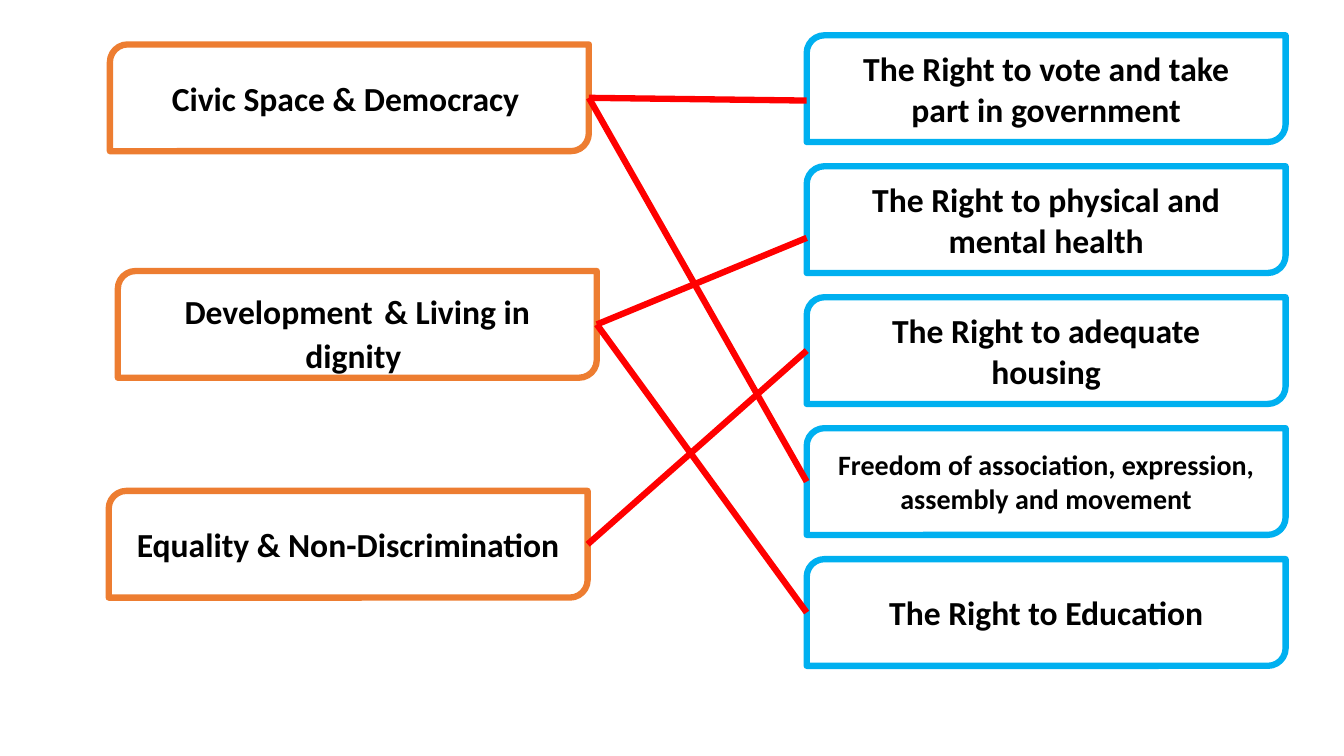
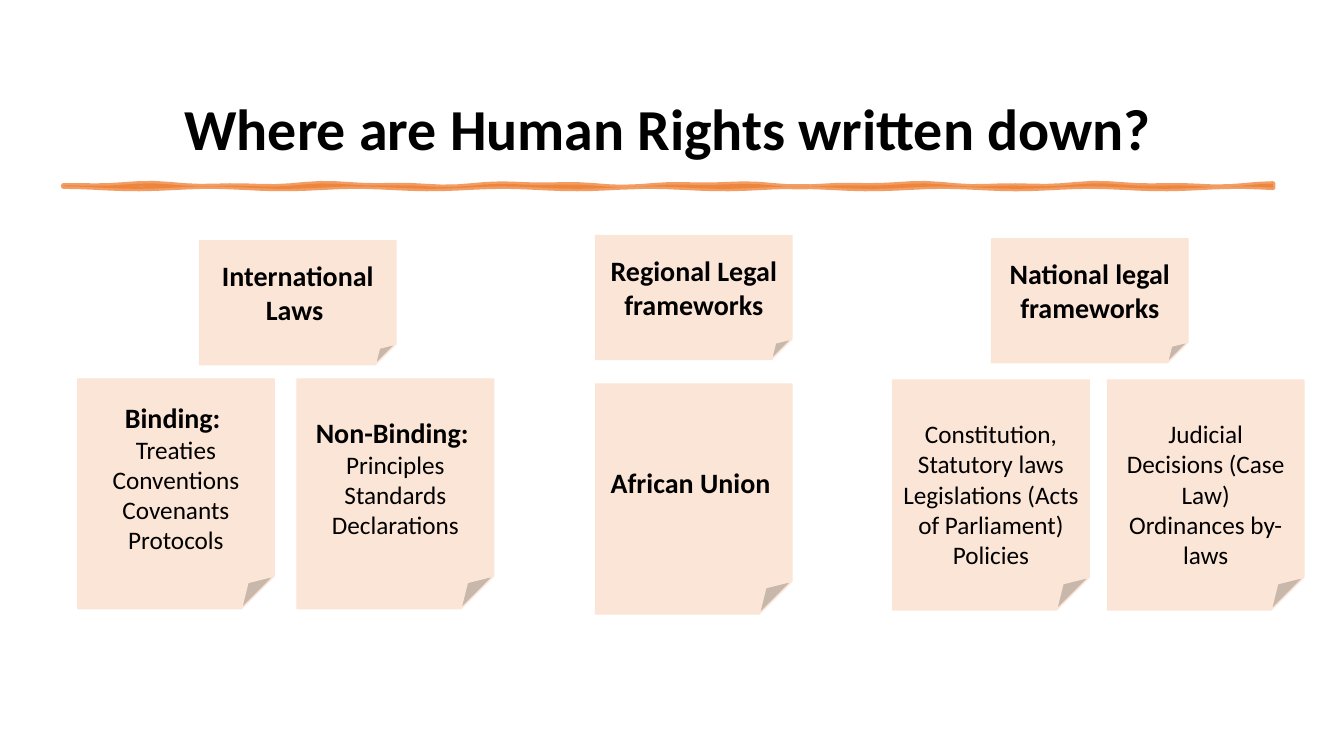
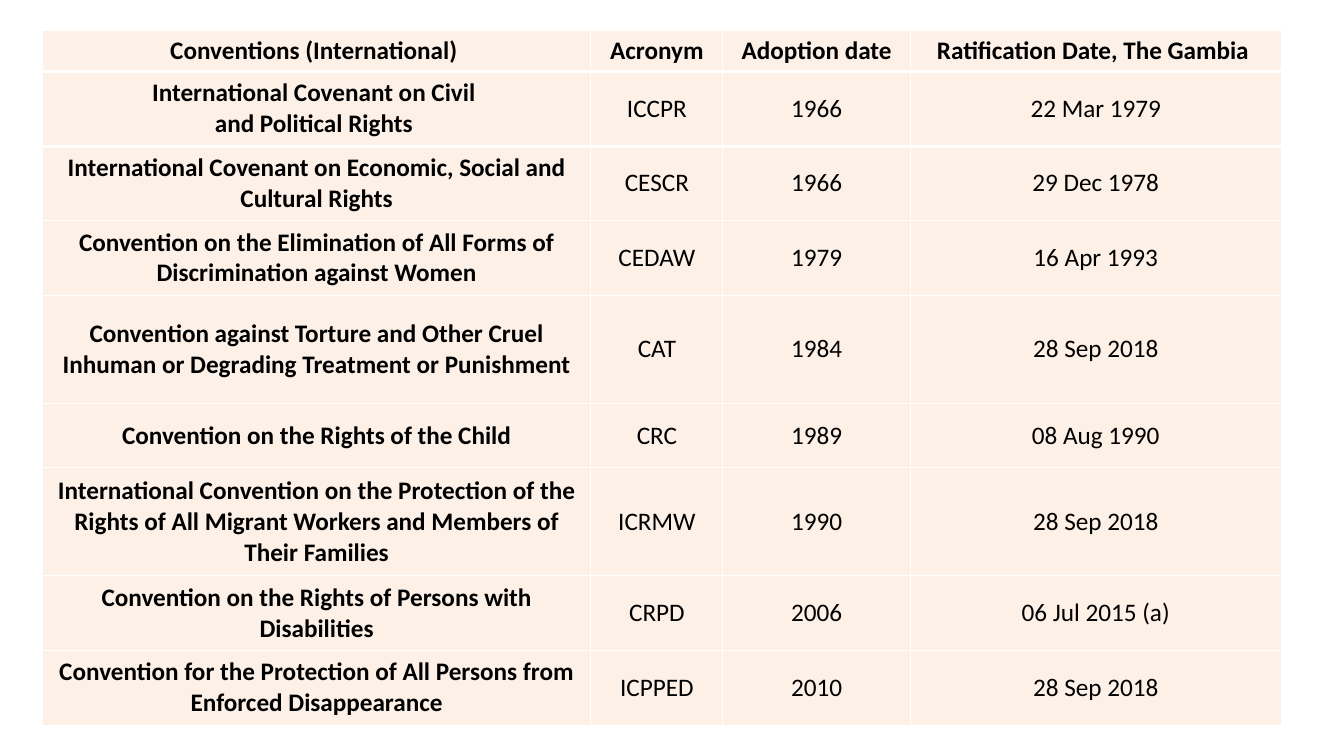
from math import sin

from lxml import etree
from pptx import Presentation
from pptx.dml.color import RGBColor
from pptx.enum import shapes, text
from pptx.oxml.ns import qn
from pptx.util import Cm, Pt

# Shared look
FONT = "Calibri"
BLACK, WHITE, RED = "000000", "FFFFFF", "FF0000"
ORANGE, BLUE, NOTE, CELL = "ED7D31", "00B0F0", "FBE5D6", "F4B183"
FRAME = 4.5

# Slide 1: themes linked to rights
BOX_W, BOX_H = 12.07, 2.69
THEMES = [  # left, top, runs (text, size)
    (2.77, 1.12, [("Civic Space & Democracy ", 24)]),
    (2.97, 6.83, [("Development", 24), (" ", 36), ("& Living in dignity ", 24)]),
    (2.74, 12.37, [("Equality & Non-Discrimination", 24)]),
]
RIGHTS_LEFT, RIGHTS_TOP, RIGHTS_PITCH = 20.33, 0.89, 3.3
RIGHTS = [  # text, size, side margin
    ("The Right to vote and take part in government", 24, 0.75),
    ("The Right to physical and mental health", 24, 0.75),
    ("The Right to adequate housing", 24, 0.75),
    ("Freedom of association, expression, assembly and movement", 20, 0.25),
    ("The Right to Education", 24, 0.75),
]
LINKS = [  # theme, right, distance below the middle of the right's box
    (0, 0, 0.3), (0, 3, 0), (1, 1, 0.46), (1, 4, 0), (2, 2, 0),
]

# Slide 2: notes
TITLE = "Where are Human Rights written down?"
NOTE_W, HEAD_H, BODY_H = 4.95, 3.12, 5.79
HEADS = [  # left, top, text
    (5.03, 6.07, "International Laws "),
    (15.01, 5.94, "Regional Legal frameworks"),
    (24.99, 6.02, "National legal\nframeworks"),
]
BODIES = [  # left, top, top margin, bold heading, plain text
    (1.96, 9.55, 0.13, "Binding: ", "Treaties Conventions Covenants\nProtocols"),
    (7.49, 9.55, 0.13, "Non-Binding: ", "Principles Standards Declarations"),
    (15.01, 9.68, 0.13, "African Union ", ""),
    (22.5, 9.58, 0.9, "",
     "Constitution, Statutory laws\nLegislations (Acts of Parliament)\nPolicies"),
    (27.91, 9.58, 0.9, "", "Judicial Decisions (Case Law)\nOrdinances by-laws"),
]

# Slide 3: conventions
COL_WIDTHS = [13.82, 3.33, 4.72, 9.35]
ROW_HEIGHTS = [1.04, 1.88, 1.88, 1.88, 2.72, 1.63, 2.72, 1.88, 1.88]
CONVENTIONS = [
    ("Conventions (International) ", "Acronym", "Adoption date",
     "Ratification Date, The Gambia "),
    ("International Covenant on Civil \nand Political Rights ",
     "ICCPR", "1966", "22 Mar 1979"),
    ("International Covenant on Economic, Social and Cultural Rights",
     "CESCR", "1966", "29 Dec 1978"),
    ("Convention on the Elimination of All Forms of Discrimination against Women",
     "CEDAW", "1979", "16 Apr 1993"),
    ("Convention against Torture and Other Cruel Inhuman or Degrading "
     "Treatment or Punishment", "CAT", "1984", "28 Sep 2018"),
    ("Convention on the Rights of the Child", "CRC", "1989", "08 Aug 1990"),
    ("International Convention on the Protection of the Rights of All Migrant "
     "Workers and Members of Their Families", "ICRMW", "1990", "28 Sep 2018"),
    ("Convention on the Rights of Persons with Disabilities",
     "CRPD", "2006", "06 Jul 2015 (a)"),
    ("Convention for the Protection of All Persons from Enforced Disappearance",
     "ICPPED", "2010", "28 Sep 2018"),
]


def paint(fill, color, alpha=None):
    fill.solid()
    fill.fore_color.rgb = RGBColor.from_string(color)
    if alpha:
        for clr in fill._xPr.iter(qn("a:srgbClr")):
            etree.SubElement(clr, qn("a:alpha"), val=str(alpha * 1000))


def style(p, size, bold=True):
    p.alignment = text.PP_ALIGN.CENTER
    p.font.name, p.font.size, p.font.bold = FONT, Pt(size), bold
    p.font.color.rgb = RGBColor.from_string(BLACK)


def add_box(slide, kind, left, top, width, height, fill, line, weight):
    sp = slide.shapes.add_shape(kind, Cm(left), Cm(top), Cm(width), Cm(height))
    sp.shadow.inherit = False
    paint(sp.fill, fill)
    paint(sp.line.fill, line)
    sp.line.width = Pt(weight)
    sp.text_frame.word_wrap = True
    sp.text_frame.vertical_anchor = text.MSO_ANCHOR.MIDDLE
    return sp


def add_frame(slide, left, top, color, runs, margin=0.25):
    sp = add_box(slide, shapes.MSO_SHAPE.ROUND_2_DIAG_RECTANGLE, left, top,
                 BOX_W, BOX_H, WHITE, color, FRAME)
    tf = sp.text_frame
    tf.margin_left = tf.margin_right = Cm(margin)
    p = tf.paragraphs[0]
    main_size = runs[0][1]
    style(p, main_size)
    for words, size in runs:
        r = p.add_run()
        r.text = words
        if size != main_size:
            r.font.size = Pt(size)


def add_note(slide, left, top, height, lines, margin_top=0.13):
    sp = add_box(slide, shapes.MSO_SHAPE.FOLDED_CORNER, left, top,
                 NOTE_W, height, NOTE, NOTE, 1)
    tf = sp.text_frame
    tf.margin_top = Cm(margin_top)
    tf.text = "\n".join(words for words, _, _ in lines)
    for p, (_, size, bold) in zip(tf.paragraphs, lines):
        style(p, size, bold)


def add_link(slide, x1, y1, x2, y2):
    line = slide.shapes.add_connector(
        shapes.MSO_CONNECTOR.STRAIGHT, Cm(x1), Cm(y1), Cm(x2), Cm(y2))
    paint(line.line.fill, RED)
    line.line.width = Pt(FRAME)
    etree.SubElement(line._element.spPr, qn("a:effectLst"))


def add_brush_line(slide, left, right, top, thickness, steps=80):
    """Draw a hand-painted rule as a thin outline with wavy edges."""
    xs = [left + (right - left) * i / steps for i in range(steps + 1)]
    upper = [(x, top + 0.03 * sin(1.3 * x) + 0.02 * sin(2.9 * x)) for x in xs]
    lower = [(x, top + thickness + 0.03 * sin(1.7 * x + 2)) for x in xs]
    points = [(Cm(x), Cm(y)) for x, y in upper + lower[::-1]]
    builder = slide.shapes.build_freeform(*points[0])
    builder.add_line_segments(points[1:], close=True)
    sp = builder.convert_to_shape()
    sp.shadow.inherit = False
    paint(sp.fill, ORANGE, 75)
    paint(sp.line.fill, ORANGE, 75)
    sp.line.width = Pt(3.5)


def set_borders(cell, **widths):
    tc_pr = cell._tc.get_or_add_tcPr()
    for side in "LRTB":
        ln = etree.SubElement(tc_pr, qn("a:ln" + side),
                              w=str(Pt(widths.get(side, 0.81))))
        solid = etree.SubElement(ln, qn("a:solidFill"))
        etree.SubElement(solid, qn("a:srgbClr"), val=WHITE)


def build_links_slide(prs):
    slide = prs.slides.add_slide(prs.slide_layouts[6])
    for left, top, runs in THEMES:
        add_frame(slide, left, top, ORANGE, runs)
    for i, (words, size, margin) in enumerate(RIGHTS):
        add_frame(slide, RIGHTS_LEFT, RIGHTS_TOP + i * RIGHTS_PITCH, BLUE,
                  [(words, size)], margin)
    for theme, right, drop in LINKS:
        left, top, _ = THEMES[theme]
        add_link(slide, left + BOX_W, top + BOX_H / 2, RIGHTS_LEFT,
                 RIGHTS_TOP + right * RIGHTS_PITCH + BOX_H / 2 + drop)


def build_notes_slide(prs):
    slide = prs.slides.add_slide(prs.slide_layouts[5])
    title = slide.shapes.title
    title.left, title.top, title.width, title.height = (
        Cm(1.52), Cm(1.3), Cm(30.61), Cm(2.92))
    tf = title.text_frame
    tf.text = TITLE
    tf.auto_size = text.MSO_AUTO_SIZE.NONE
    tf.vertical_anchor = text.MSO_ANCHOR.BOTTOM
    style(tf.paragraphs[0], 41.4)
    add_brush_line(slide, 1.6, 32.08, 4.67, 0.06)

    for left, top, words in HEADS:
        add_note(slide, left, top, HEAD_H,
                 [(line, 20, True) for line in words.split("\n")])
    for left, top, margin, heading, plain in BODIES:
        lines = [(heading, 20, True)] if heading else []
        lines += [(line, 18, False) for line in plain.splitlines()]
        add_note(slide, left, top, BODY_H, lines, margin)


def build_table_slide(prs):
    slide = prs.slides.add_slide(prs.slide_layouts[6])
    table = slide.shapes.add_table(
        len(ROW_HEIGHTS), len(COL_WIDTHS), Cm(1.07), Cm(0.76),
        Cm(sum(COL_WIDTHS)), Cm(sum(ROW_HEIGHTS))).table
    table.first_row = table.horz_banding = False
    for col, width in zip(table.columns, COL_WIDTHS):
        col.width = Cm(width)
    for i, (row, height) in enumerate(zip(table.rows, ROW_HEIGHTS)):
        row.height = Cm(height)
        for j, cell in enumerate(row.cells):
            cell.text = CONVENTIONS[i][j]
            cell.vertical_anchor = text.MSO_ANCHOR.MIDDLE
            cell.margin_left = cell.margin_right = Cm(0.18)
            cell.margin_top = cell.margin_bottom = Cm(0.1)
            for p in cell.text_frame.paragraphs:
                style(p, 18, i == 0 or j == 0)
            # Heavier rules under the first two rows
            set_borders(cell, T=2.44 if i in (1, 2) else 0.81,
                        B=2.44 if i in (0, 1) else 0.81)
            paint(cell.fill, CELL, 19)


def main():
    prs = Presentation()
    prs.slide_width, prs.slide_height = Cm(33.87), Cm(19.05)
    build_links_slide(prs)
    build_notes_slide(prs)
    build_table_slide(prs)
    prs.save("out.pptx")


if __name__ == "__main__":
    main()
